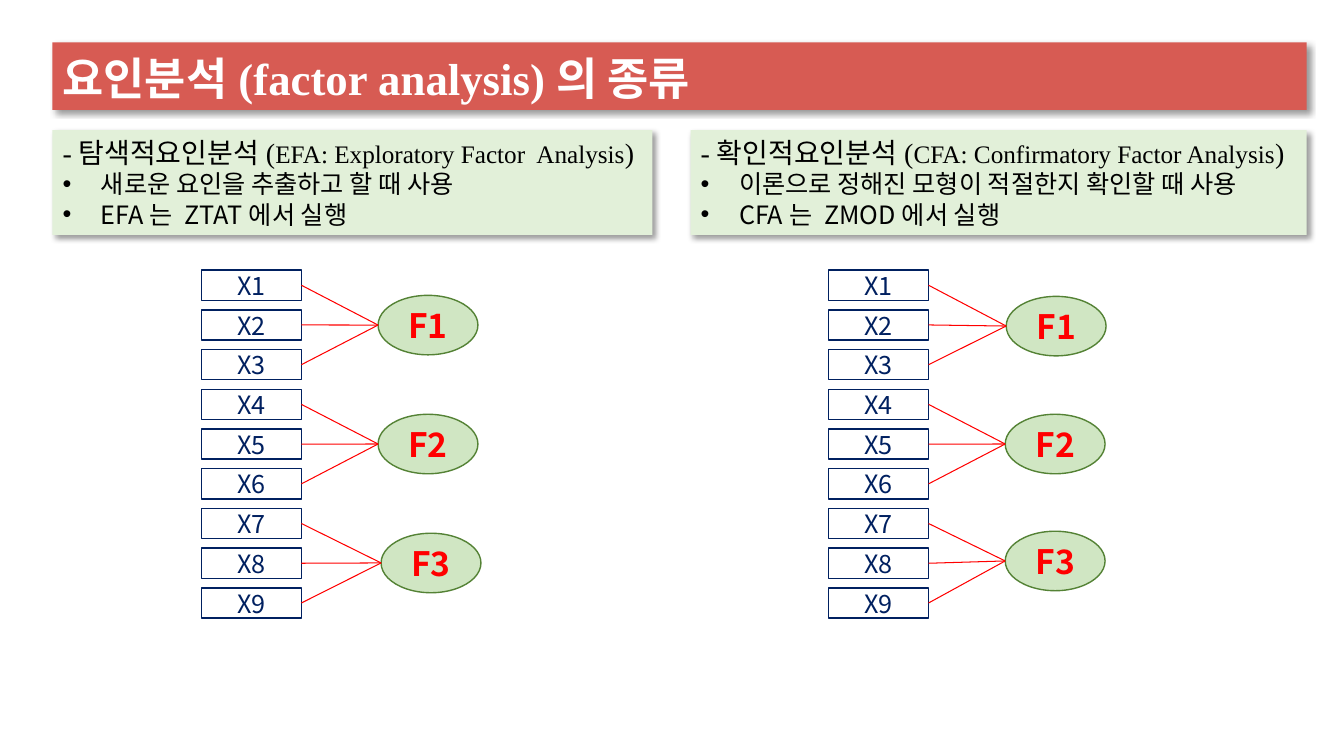
import pptx
import pptx.dml.color
import pptx.enum.shapes
import pptx.enum.text
import pptx.oxml
import pptx.oxml.ns
import pptx.util
from pptx.util import Inches

Color = pptx.dml.color.RGBColor
Shape = pptx.enum.shapes.MSO_SHAPE
Anchor = pptx.enum.text.MSO_ANCHOR
Align = pptx.enum.text.PP_ALIGN

CORAL = Color(0xD7, 0x5B, 0x53)
MINT = Color(0xE2, 0xF0, 0xD9)
LEAF = Color(0xC5, 0xE0, 0xB4)
FOREST = Color(0x54, 0x82, 0x35)
NAVY = Color(0x00, 0x20, 0x60)
RED = Color(0xFF, 0x00, 0x00)
WHITE = Color(0xFF, 0xFF, 0xFF)
BLACK = Color(0x00, 0x00, 0x00)

SANS = "Noto Sans CJK KR"
SERIF = "Times New Roman"
SHADOW = (
    '<a:effectLst %s><a:outerShdw blurRad="50800" dist="38100" dir="2700000" '
    'algn="tl" rotWithShape="0"><a:srgbClr val="000000"><a:alpha val="40000"/>'
    "</a:srgbClr></a:outerShdw></a:effectLst>" % pptx.oxml.ns.nsdecls("a")
)
STEP, WIDE, HIGH, TALL = 0.394, 0.99, 0.3, 0.59


def apply(item, form):
    """Set each attribute of item from a dict of format values."""
    for name, value in form.items():
        setattr(item, name, value)


def add_run(para, text, size, face, color, bold=False):
    """Add a run with its Latin and East Asian fonts."""
    run = para.add_run()
    run.text = text
    apply(run.font, {"size": pptx.util.Pt(size), "name": face, "bold": bold})
    run.font.color.rgb = color
    asian = pptx.oxml.ns.qn("a:ea")
    run.font._element.find(pptx.oxml.ns.qn("a:latin")).addnext(
        run.font._element.makeelement(asian, {"typeface": SANS})
    )


def set_list(para, indent=0, mark=None):
    """Give a paragraph its hanging indent and bullet."""
    props = para._p.get_or_add_pPr()
    props.set("marL", str(Inches(indent)))
    props.set("indent", str(Inches(-indent)))
    tag = "a:buChar" if mark else "a:buNone"
    bullet = pptx.oxml.ns.qn(tag)
    props.append(props.makeelement(bullet, {"char": mark} if mark else {}))


def set_card(holder, box, color, anchor):
    """Place a placeholder as a filled card with a shadow."""
    names = ("left", "top", "width", "height")
    apply(holder, dict(zip(names, map(Inches, box))))
    holder.fill.solid()
    holder.fill.fore_color.rgb = color
    holder._element.spPr.append(pptx.oxml.parse_xml(SHADOW))
    form = {
        "word_wrap": True,
        "auto_size": pptx.enum.text.MSO_AUTO_SIZE.NONE,
        "vertical_anchor": anchor,
    }
    apply(holder.text_frame, form)


def fill_head(holder, box):
    """Write the title band."""
    set_card(holder, box, CORAL, Anchor.BOTTOM)
    para = holder.text_frame.paragraphs[0]
    apply(para, {"alignment": Align.LEFT, "line_spacing": 0.9})
    add_run(para, "요인분석", 32, SANS, WHITE, True)
    add_run(para, "(factor analysis)의 종류", 32, SERIF, WHITE, True)


def fill_panel(holder, box, name, term, points):
    """Write a panel with its heading and bulleted points."""
    set_card(holder, box, MINT, Anchor.TOP)
    frame = holder.text_frame
    para = frame.paragraphs[0]
    para.space_before = pptx.util.Pt(0)
    set_list(para)
    for text, size in ((f"-{name}(", 20), (term, 18), (")", 20)):
        add_run(para, text, size, SERIF, BLACK)
    for point in points:
        para = frame.add_paragraph()
        para.space_before = pptx.util.Pt(0)
        set_list(para, 0.38, "•")
        add_run(para, point, 18, SANS, BLACK)


def add_node(slide, kind, box, text, size, color, edge, bold=False):
    """Add an outlined shape with a centred label."""
    node = slide.shapes.add_shape(kind, *map(Inches, box))
    node.shadow.inherit = False
    node.fill.background()
    node.line.color.rgb = edge
    node.line.width = pptx.util.Pt(1)
    form = {
        "vertical_anchor": Anchor.MIDDLE,
        "word_wrap": True,
        "margin_top": 0,
        "margin_bottom": 0,
    }
    apply(node.text_frame, form)
    para = node.text_frame.paragraphs[0]
    para.alignment = Align.CENTER
    add_run(para, text, size, SANS, color, bold)
    return node


def add_link(slide, start, end):
    """Draw a thin red line between two points."""
    kind = pptx.enum.shapes.MSO_CONNECTOR.STRAIGHT
    link = slide.shapes.add_connector(kind, *map(Inches, start + end))
    link.line.color.rgb = RED
    link.line.width = pptx.util.Pt(0.75)
    props = link._element.spPr
    props.append(props.makeelement(pptx.oxml.ns.qn("a:effectLst"), {}))


def add_model(slide, left, top, spots):
    """Draw nine items, each three linked to the factor at its spot."""
    for group, (across, down) in enumerate(spots):
        x, y = left + across, top + down
        oval = add_node(slide, Shape.OVAL, (x, y, WIDE, TALL),
                        f"F{group + 1}", 24, RED, FOREST, True)
        oval.fill.solid()
        oval.fill.fore_color.rgb = LEAF
        tint = oval._element.spPr.find(".//" + pptx.oxml.ns.qn("a:srgbClr"))
        tint.append(tint.makeelement(pptx.oxml.ns.qn("a:alpha"), {"val": "80000"}))
        for row in range(group * 3, group * 3 + 3):
            level = top + row * STEP
            add_node(slide, Shape.RECTANGLE, (left, level, WIDE, HIGH),
                     f"X{row + 1}", 18, NAVY, NAVY)
            add_link(slide, (left + WIDE, level + HIGH / 2), (x, y + TALL / 2))


def main():
    """Build and save the slide."""
    deck = pptx.Presentation()
    apply(deck, {"slide_width": Inches(13.33), "slide_height": Inches(7.5)})
    slide = deck.slides.add_slide(deck.slide_layouts[3])
    title, first, second = slide.placeholders
    fill_head(title, (0.52, 0.42, 12.44, 0.67))
    fill_panel(first, (0.52, 1.29, 5.95, 1.04), "탐색적요인분석",
               "EFA: Exploratory Factor\u00a0 Analysis".replace("\u00a0", " "),
               ("새로운 요인을 추출하고 할 때 사용", "EFA는 ZTAT에서 실행"))
    fill_panel(second, (6.85, 1.29, 6.11, 1.04), "확인적요인분석",
               "CFA: Confirmatory Factor Analysis",
               ("이론으로 정해진 모형이 적절한지 확인할 때 사용", "CFA는 ZMOD에서 실행"))
    add_model(slide, 2, 2.68, ((1.75, 0.25), (1.75, 1.43), (1.78, 2.61)))
    add_model(slide, 8.22, 2.68, ((1.76, 0.26), (1.75, 1.43), (1.75, 2.59)))
    deck.save("out.pptx")


if __name__ == "__main__":
    main()
